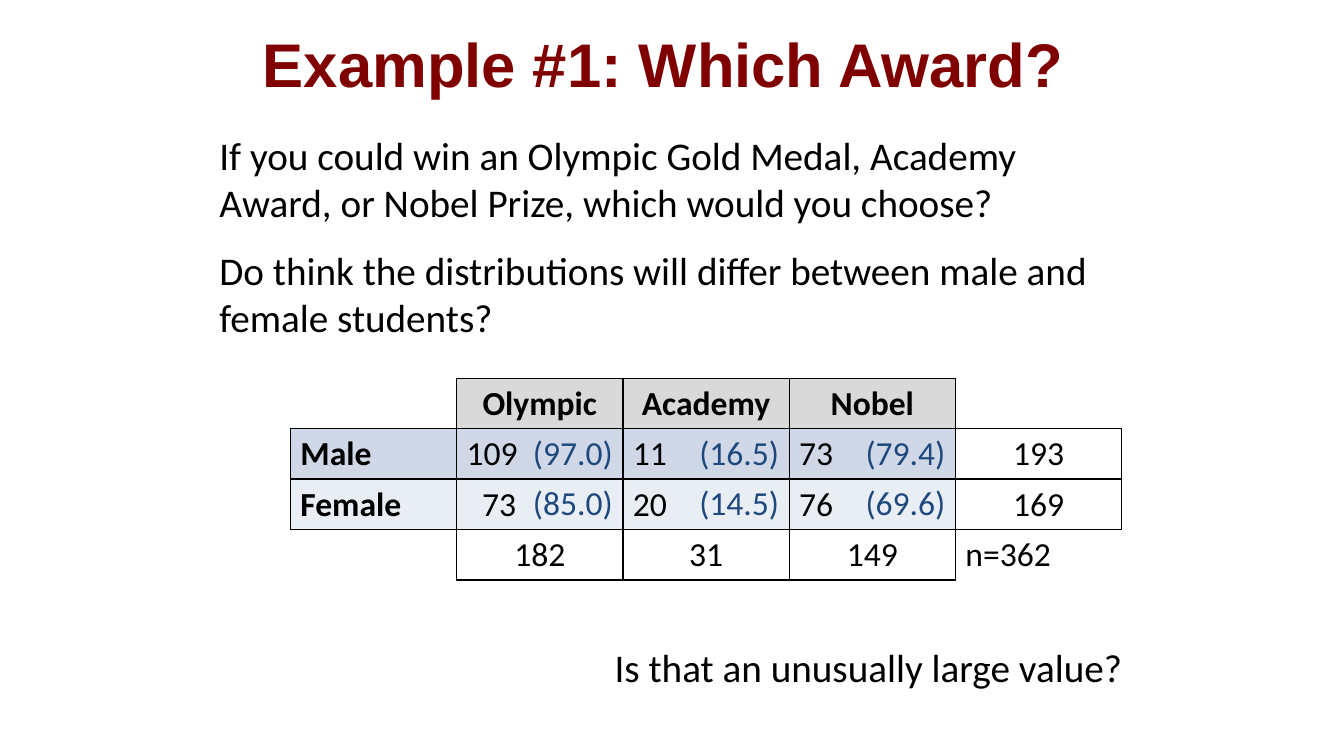
"""Build a slide on award choices with observed and expected counts."""
from dataclasses import dataclass

from lxml import etree
from pptx import Presentation, util as u
from pptx.dml.color import RGBColor
from pptx.enum import text as t
from pptx.oxml.ns import qn

BLACK, BLUE, MAROON = "000000", "1F497D", "800000"
GREY, MALE, FEMALE = "D9D9D9", "D0D8E8", "E9EDF4"
LEFT, MID, RIGHT = t.PP_ALIGN.LEFT, t.PP_ALIGN.CENTER, t.PP_ALIGN.RIGHT
COL, ROW = 4.19, 1.27
SIDES = ("lnL", "lnR", "lnT", "lnB")
BODY = {"name": "Calibri", "size": u.Pt(28), "bold": False}
DATA = BODY | {"size": u.Pt(24)}
LABEL = DATA | {"bold": True}
TITLE = {"name": "Arial", "size": u.Pt(44), "bold": True}


@dataclass
class Box:
    words: str
    left: float
    top: float
    width: float
    height: float
    look: dict
    tint: str = BLACK
    align: t.PP_ALIGN = LEFT
    anchor: t.MSO_ANCHOR = t.MSO_ANCHOR.TOP


@dataclass
class Item:
    words: str = ""
    align: t.PP_ALIGN = LEFT
    fill: str = ""
    look: dict | None = None
    tint: str = BLACK
    edges: tuple = SIDES
    pad: float = 0.25


def color(code: str) -> RGBColor:
    return RGBColor.from_string(code)


def write(frame, words: str, look: dict, tint: str, align) -> None:
    para = frame.paragraphs[0]
    para.alignment = align
    run = para.add_run()
    run.text = words
    for key, value in look.items():
        setattr(run.font, key, value)
    run.font.color.rgb = color(tint)


def draw_box(slide, box: Box) -> None:
    area = map(u.Cm, (box.left, box.top, box.width, box.height))
    frame = slide.shapes.add_textbox(*area).text_frame
    frame.word_wrap = True
    frame.vertical_anchor = box.anchor
    write(frame, box.words, box.look, box.tint, box.align)


def draw_edges(cell, edges: tuple) -> None:
    props = cell._tc.get_or_add_tcPr()
    for side in SIDES:
        line = etree.SubElement(props, qn(f"a:{side}"), w=str(u.Pt(1)))
        if side in edges:
            fill = etree.SubElement(line, qn("a:solidFill"))
            etree.SubElement(fill, qn("a:srgbClr"), val=BLACK)
        else:
            etree.SubElement(line, qn("a:noFill"))


def draw_cell(cell, item: Item) -> None:
    draw_edges(cell, item.edges)
    if item.fill:
        cell.fill.solid()
        cell.fill.fore_color.rgb = color(item.fill)
    else:
        cell.fill.background()
    cell.margin_left = u.Cm(item.pad)
    if item.words:
        write(cell.text_frame, item.words, item.look or DATA, item.tint, item.align)


def draw_grid(slide, left: float, top: float, grid: list[list[Item]]) -> None:
    rows, cols = len(grid), len(grid[0])
    area = map(u.Cm, (left, top, cols * COL, rows * ROW))
    table = slide.shapes.add_table(rows, cols, *area).table
    table.first_row = table.horz_banding = False
    for row, items in enumerate(grid):
        for col, item in enumerate(items):
            draw_cell(table.cell(row, col), item)


def count_row(name: str, counts: list[str], total: str, fill: str, pad: float) -> list[Item]:
    cells = [Item(word, fill=fill) for word in counts]
    cells[0].pad = pad
    return [Item(name, fill=fill, look=LABEL), *cells, Item(total, MID)]


def main() -> None:
    deck = Presentation()
    deck.slide_width, deck.slide_height = u.Cm(33.87), u.Cm(19.05)
    slide = deck.slides.add_slide(deck.slide_layouts[6])
    boxes = [
        Box("Example #1: Which Award? ", 1.7, 0, 30.48, 3.18, TITLE, MAROON,
            MID, t.MSO_ANCHOR.MIDDLE),
        Box("If you could win an Olympic Gold Medal, Academy Award, or Nobel Prize, "
            "which would you choose?", 5.28, 3.18, 22.43, 2.64, BODY),
        Box("Do think the distributions will differ between male and female students?",
            5.28, 6.07, 22.43, 2.64, BODY),
        Box("Is that an unusually large value?", 15.24, 16.08, 13.34, 1.45, BODY),
    ]
    for box in boxes:
        draw_box(slide, box)

    heads = [Item(word, MID, GREY, LABEL) for word in ("Olympic", "Academy", "Nobel")]
    sums = [Item(word, MID) for word in ("182", "31", "149")]
    counts = [
        [Item(edges=("lnR", "lnB")), *heads, Item(edges=("lnL", "lnB"))],
        count_row("Male", ["109", "11", "73"], "193", MALE, 0.25),
        count_row("Female", ["73", "20", "76"], "169", FEMALE, 0.64),
        [Item(edges=("lnR", "lnT")), *sums, Item("n=362", edges=("lnL", "lnT"))],
    ]
    hopes = [("(97.0)", "(16.5)", "(79.4)"), ("(85.0)", "(14.5)", "(69.6)")]
    left, top = 7.32, 9.53
    draw_grid(slide, left, top, counts)
    draw_grid(slide, left + COL, top + ROW,
              [[Item(word, RIGHT, tint=BLUE, edges=()) for word in row] for row in hopes])
    deck.save("out.pptx")


if __name__ == "__main__":
    main()
